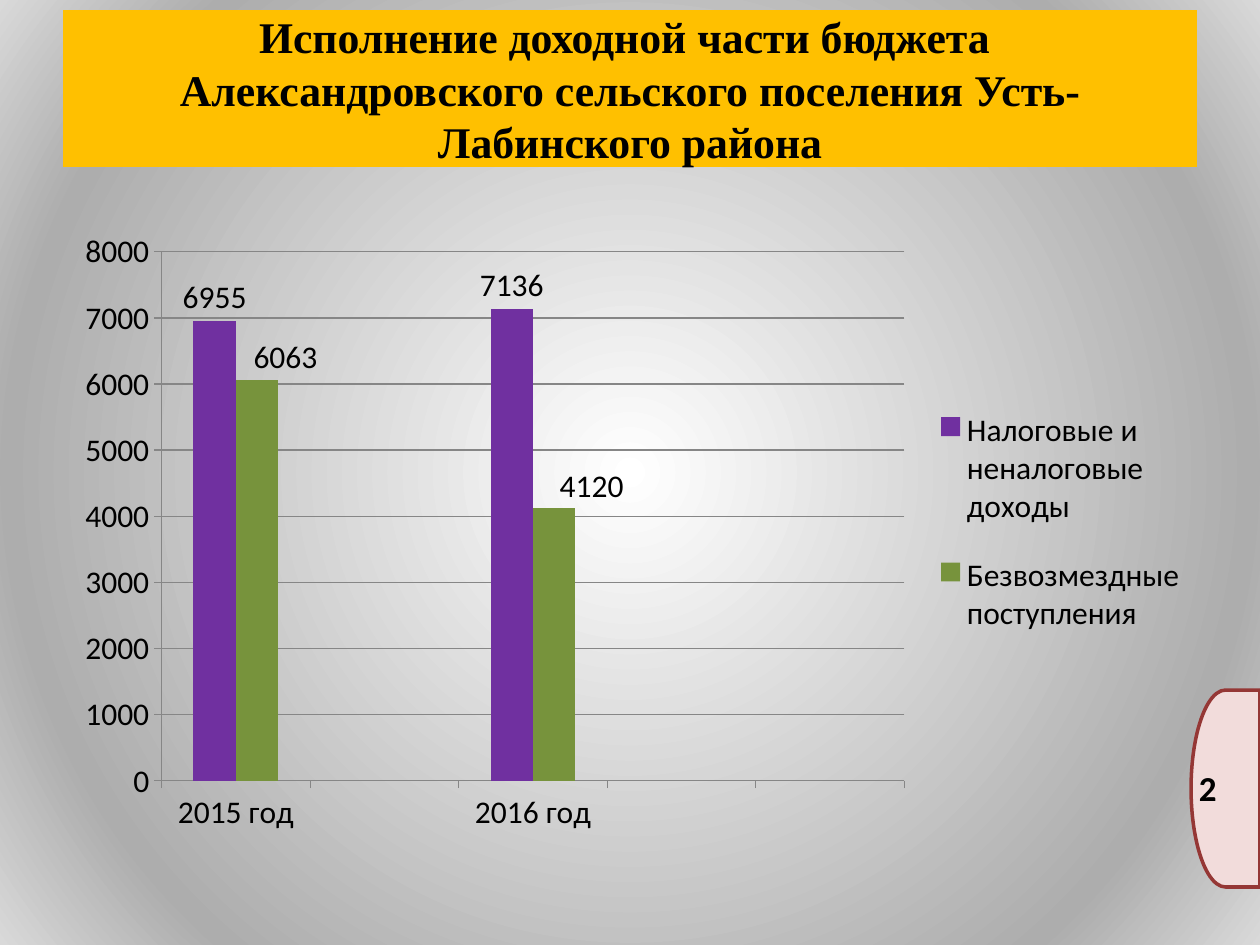
from dataclasses import dataclass

from pptx import Presentation
from pptx.chart.data import CategoryChartData
from pptx.dml.color import RGBColor
from pptx.enum.chart import XL_CHART_TYPE, XL_LABEL_POSITION, XL_LEGEND_POSITION, XL_TICK_MARK
from pptx.enum.shapes import MSO_SHAPE
from pptx.enum.text import MSO_ANCHOR, MSO_AUTO_SIZE, PP_ALIGN
from pptx.oxml import parse_xml
from pptx.oxml.ns import nsdecls, qn
from pptx.util import Emu, Pt

SCALE = 914400 / 126  # EMU in one px


@dataclass(frozen=True)
class Theme:
    text: str = "000000"
    banner: str = "FFC000"
    own_income: str = "7030A0"
    grants: str = "77933C"
    grid: str = "868686"
    tab_fill: str = "F2DCDB"
    tab_line: str = "953735"
    backdrop: tuple = ((0, "FFFFFF"), (79, "ADADAD"), (100, "D9D9D9"))
    title_font: str = "Times New Roman"
    body_font: str = "Calibri"
    title_size: int = 25
    chart_size: int = 18
    number_size: int = 20


THEME = Theme()


def px(value):
    return Emu(round(value * SCALE))


def color(value):
    return RGBColor.from_string(value)


def format_font(font, name, size, bold=False):
    font.name, font.size, font.bold = name, Pt(size), bold
    font.color.rgb = color(THEME.text)


def write_text(shape, text, *, font, size, bold=False, align=PP_ALIGN.LEFT,
               anchor=MSO_ANCHOR.TOP, margins=(13, 6)):
    frame = shape.text_frame
    frame.word_wrap = True
    frame.auto_size = MSO_AUTO_SIZE.NONE
    frame.vertical_anchor = anchor
    frame.margin_left = frame.margin_right = px(margins[0])
    frame.margin_top = frame.margin_bottom = px(margins[1])
    paragraph = frame.paragraphs[0]
    paragraph.text = text
    paragraph.alignment = align
    for run in paragraph.runs:
        format_font(run.font, font, size, bold)


def paint_background(slide):
    """Radial gradient from the centre to the corners."""
    slide.background.fill.solid()
    stops = "".join(
        f'<a:gs pos="{position * 1000}"><a:srgbClr val="{value}"/></a:gs>'
        for position, value in THEME.backdrop)
    gradient = parse_xml(
        f'<a:gradFill {nsdecls("a")} rotWithShape="1"><a:gsLst>{stops}</a:gsLst>'
        '<a:path path="circle"><a:fillToRect l="50000" t="50000" r="50000" b="50000"/>'
        '</a:path></a:gradFill>')
    solid = slide.element.find(".//" + qn("p:bgPr")).find(qn("a:solidFill"))
    solid.getparent().replace(solid, gradient)


def add_title(slide, left, top, width, height):
    title = slide.shapes.title
    title.left, title.top, title.width, title.height = map(px, (left, top, width, height))
    title.fill.solid()
    title.fill.fore_color.rgb = color(THEME.banner)
    write_text(title,
               "Исполнение доходной части бюджета \v"
               "Александровского сельского поселения Усть-Лабинского района",
               font=THEME.title_font, size=THEME.title_size, bold=True,
               align=PP_ALIGN.CENTER, anchor=MSO_ANCHOR.MIDDLE, margins=(6, 0))


def manual_layout(x, y, width=None, height=None, inner=False, edge=True):
    """Chart layout in fractions of the chart area."""
    parts = ['<c:layoutTarget val="inner"/>'] if inner else []
    if edge:
        parts += ['<c:xMode val="edge"/>', '<c:yMode val="edge"/>']
    parts += [f'<c:{tag} val="{value:.3f}"/>'
              for tag, value in zip("xywh", (x, y, width, height)) if value is not None]
    return parse_xml(f'<c:layout {nsdecls("c")}><c:manualLayout>{"".join(parts)}'
                     '</c:manualLayout></c:layout>')


def format_axis(axis):
    axis.major_tick_mark = XL_TICK_MARK.OUTSIDE
    axis.minor_tick_mark = XL_TICK_MARK.NONE
    axis.format.line.color.rgb = color(THEME.grid)
    format_font(axis.tick_labels.font, THEME.body_font, THEME.chart_size)


def add_income_chart(slide, left, top, width, height):
    data = CategoryChartData(number_format="0")
    data.categories = ["2015 год", "", "2016 год", "", ""]
    data.add_series("Налоговые и неналоговые доходы", (6955, None, 7136, None, None))
    data.add_series("Безвозмездные поступления", (6063, None, 4120, None, None))
    chart = slide.shapes.add_chart(XL_CHART_TYPE.COLUMN_CLUSTERED,
                                   *map(px, (left, top, width, height)), data).chart
    chart.has_title = False
    format_font(chart.font, THEME.body_font, THEME.chart_size)

    # Axes and gridlines
    format_axis(chart.category_axis)
    values = chart.value_axis
    format_axis(values)
    values.minimum_scale, values.maximum_scale, values.major_unit = 0, 8000, 1000
    values.major_gridlines.format.line.color.rgb = color(THEME.grid)

    # Columns and their labels
    plot = chart.plots[0]
    plot.gap_width, plot.overlap, plot.vary_by_categories = 150, 0, False
    for series, fill in zip(plot.series, (THEME.own_income, THEME.grants)):
        series.format.fill.solid()
        series.format.fill.fore_color.rgb = color(fill)
        labels = series.data_labels
        labels.show_value = True
        labels.position = XL_LABEL_POSITION.OUTSIDE_END
        format_font(labels.font, THEME.body_font, THEME.chart_size)

    # Labels of the second series stand right of their columns
    grants = plot.series[1]
    for index, shift in ((0, 28), (2, 37)):
        label = grants.points[index].data_label
        format_font(label.font, THEME.body_font, THEME.chart_size)
        label.position = XL_LABEL_POSITION.OUTSIDE_END
    for entry, shift in zip(grants.data_labels._element.findall(qn("c:dLbl")), (28, 37)):
        entry.find(qn("c:idx")).addnext(manual_layout(shift / width, 0.003, edge=False))

    # Legend and plot area
    chart.has_legend = True
    legend = chart.legend
    legend.position = XL_LEGEND_POSITION.RIGHT
    legend.include_in_layout = False
    format_font(legend.font, THEME.body_font, THEME.chart_size)
    legend._element.find(qn("c:legendPos")).addnext(
        manual_layout(868 / width, 160 / height, 260 / width, 284 / height))
    area = chart._chartSpace.chart.plotArea
    for old in area.findall(qn("c:layout")):
        area.remove(old)
    area.insert(0, manual_layout(99 / width, 32 / height, 743 / width, 529 / height,
                                 inner=True))


def add_page_tab(slide, left, top, width, height):
    group = slide.shapes.add_group_shape()
    tab = group.shapes.add_shape(MSO_SHAPE.FLOWCHART_DELAY,
                                 *map(px, (left, top, width, height)))
    tab.rotation = 180
    tab.shadow.inherit = False
    tab.fill.solid()
    tab.fill.fore_color.rgb = color(THEME.tab_fill)
    tab.line.color.rgb = color(THEME.tab_line)
    tab.line.width = Pt(2)
    number = group.shapes.add_textbox(*map(px, (left - 5, top + 70, width + 4, 55)))
    write_text(number, "2", font=THEME.body_font, size=THEME.number_size, bold=True)


def main():
    presentation = Presentation()
    presentation.slide_width, presentation.slide_height = px(1260), px(945)
    slide = presentation.slides.add_slide(presentation.slide_layouts[5])
    paint_background(slide)
    add_title(slide, 63, 10, 1134, 157)
    add_income_chart(slide, 63, 220, 1134, 624)
    add_page_tab(slide, 1191, 690, 69, 197)
    presentation.save("out.pptx")


if __name__ == "__main__":
    main()
